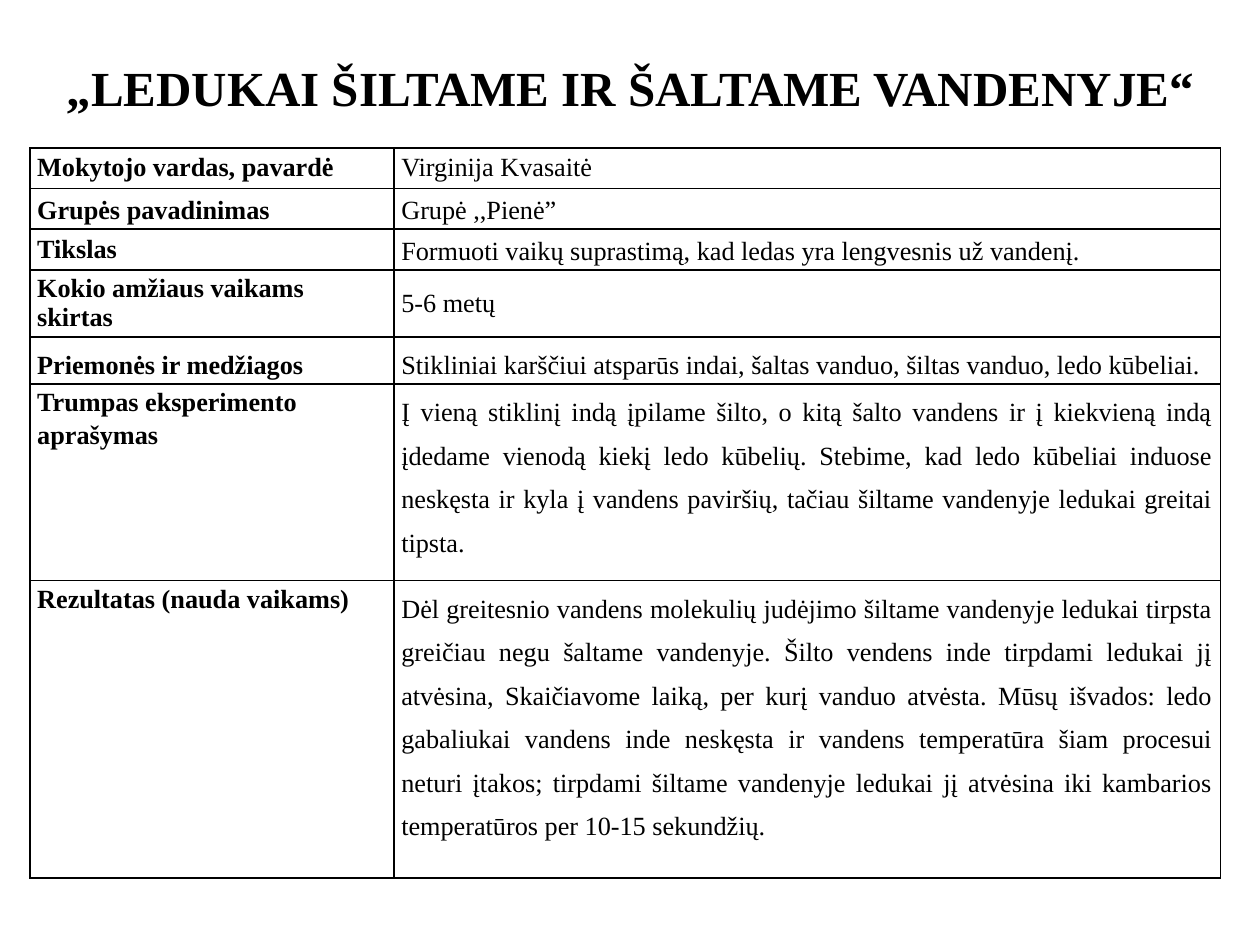
from dataclasses import dataclass

from lxml import etree
from pptx import Presentation
from pptx.dml.color import RGBColor
from pptx.enum import text as t
from pptx.oxml import ns
from pptx.util import Cm, Pt


@dataclass(frozen=True)
class Theme:
    font: str = "Times New Roman"
    ink: str = "000000"
    title_size: int = 28
    body_size: int = 15
    border_width: int = 1


MIDDLE, TOP = t.MSO_ANCHOR.MIDDLE, t.MSO_ANCHOR.TOP

# label, value, label line spacing, value line spacing, anchor, row height in cm
EXPERIMENT = [
    ("Mokytojo vardas, pavardė", "Virginija Kvasaitė", 1, 1, MIDDLE, 0.82),
    ("Grupės pavadinimas", "Grupė ,,Pienė”", 1.15, 1.15, MIDDLE, 0.82),
    ("Tikslas",
     "Formuoti vaikų suprastimą, kad ledas yra lengvesnis už vandenį.",
     1, 1.15, MIDDLE, 0.82),
    ("Kokio amžiaus vaikams skirtas", "5-6 metų", 1, 1, MIDDLE, 1.35),
    ("Priemonės ir medžiagos",
     "Stikliniai karščiui atsparūs indai, šaltas vanduo, šiltas vanduo, ledo kūbeliai.",
     1.5, 1.5, TOP, 0.95),
    ("Trumpas eksperimento aprašymas",
     "Į vieną stiklinį indą įpilame šilto, o kitą šalto vandens ir į kiekvieną indą "
     "įdedame vienodą kiekį ledo kūbelių. Stebime, kad ledo kūbeliai induose neskęsta "
     "ir kyla į vandens paviršių, tačiau šiltame vandenyje ledukai greitai tipsta.",
     1.15, 1.5, TOP, 3.96),
    ("Rezultatas (nauda vaikams)",
     "Dėl greitesnio vandens molekulių judėjimo šiltame vandenyje ledukai tirpsta "
     "greičiau negu šaltame vandenyje. Šilto vendens inde tirpdami ledukai jį atvėsina, "
     "Skaičiavome laiką, per kurį vanduo atvėsta. Mūsų išvados: ledo gabaliukai vandens "
     "inde neskęsta ir vandens temperatūra šiam procesui neturi įtakos; tirpdami šiltame "
     "vandenyje ledukai jį atvėsina iki kambarios temperatūros per 10-15 sekundžių.",
     1.15, 1.5, TOP, 6),
]


class SlideBuilder:
    def __init__(self, slide, theme):
        self.slide = slide
        self.theme = theme

    def set_text(self, frame, wording, size, bold, align, spacing):
        frame.text = wording
        frame.word_wrap = True
        paragraph = frame.paragraphs[0]
        paragraph.alignment = align
        paragraph.line_spacing = spacing
        paragraph.space_before = Pt(0)
        font = paragraph.runs[0].font
        font.name = self.theme.font
        font.size = Pt(size)
        font.bold = bold
        font.color.rgb = RGBColor.from_string(self.theme.ink)

    def title(self, wording, left, top, width, height):
        heading = self.slide.shapes.title
        heading.left, heading.top = Cm(left), Cm(top)
        heading.width, heading.height = Cm(width), Cm(height)
        frame = heading.text_frame
        self.set_text(frame, wording, self.theme.title_size, True,
                      t.PP_ALIGN.CENTER, 1.5)
        frame.auto_size = t.MSO_AUTO_SIZE.NONE
        frame.vertical_anchor = MIDDLE
        frame.margin_bottom = Cm(0.84)

    def border(self, cell):
        properties = cell._tc.get_or_add_tcPr()
        for side in ("a:lnL", "a:lnR", "a:lnT", "a:lnB"):
            line = etree.SubElement(properties, ns.qn(side),
                                    w=str(Pt(self.theme.border_width)))
            fill = etree.SubElement(line, ns.qn("a:solidFill"))
            etree.SubElement(fill, ns.qn("a:srgbClr"), val=self.theme.ink)

    def cell(self, cell, wording, bold, align, spacing, anchor):
        self.border(cell)
        cell.fill.background()
        cell.margin_left = cell.margin_right = Cm(0.15)
        cell.margin_top = cell.margin_bottom = Cm(0)
        cell.vertical_anchor = anchor
        self.set_text(cell.text_frame, wording, self.theme.body_size, bold,
                      align, spacing)

    def table(self, rows, left, top, widths):
        height = sum(row[-1] for row in rows)
        table = self.slide.shapes.add_table(
            len(rows), len(widths), Cm(left), Cm(top),
            Cm(sum(widths)), Cm(height)).table
        table.first_row = table.horz_banding = False
        for column, width in zip(table.columns, widths):
            column.width = Cm(width)
        for index, row in enumerate(rows):
            label, value, label_spacing, value_spacing, anchor, row_height = row
            table.rows[index].height = Cm(row_height)
            self.cell(table.cell(index, 0), label, True,
                      t.PP_ALIGN.LEFT, label_spacing, anchor)
            self.cell(table.cell(index, 1), value, False,
                      t.PP_ALIGN.JUSTIFY, value_spacing, anchor)


def main():
    deck = Presentation()
    deck.slide_width, deck.slide_height = Cm(25.4), Cm(19.05)
    title_only = deck.slide_layouts[5]
    builder = SlideBuilder(deck.slides.add_slide(title_only), Theme())
    builder.title("„LEDUKAI ŠILTAME IR ŠALTAME VANDENYJE“", 0, 0.4, 25.4, 2.82)
    builder.table(EXPERIMENT, 0.6, 2.98, (7.34, 16.66))
    deck.save("out.pptx")


if __name__ == "__main__":
    main()
